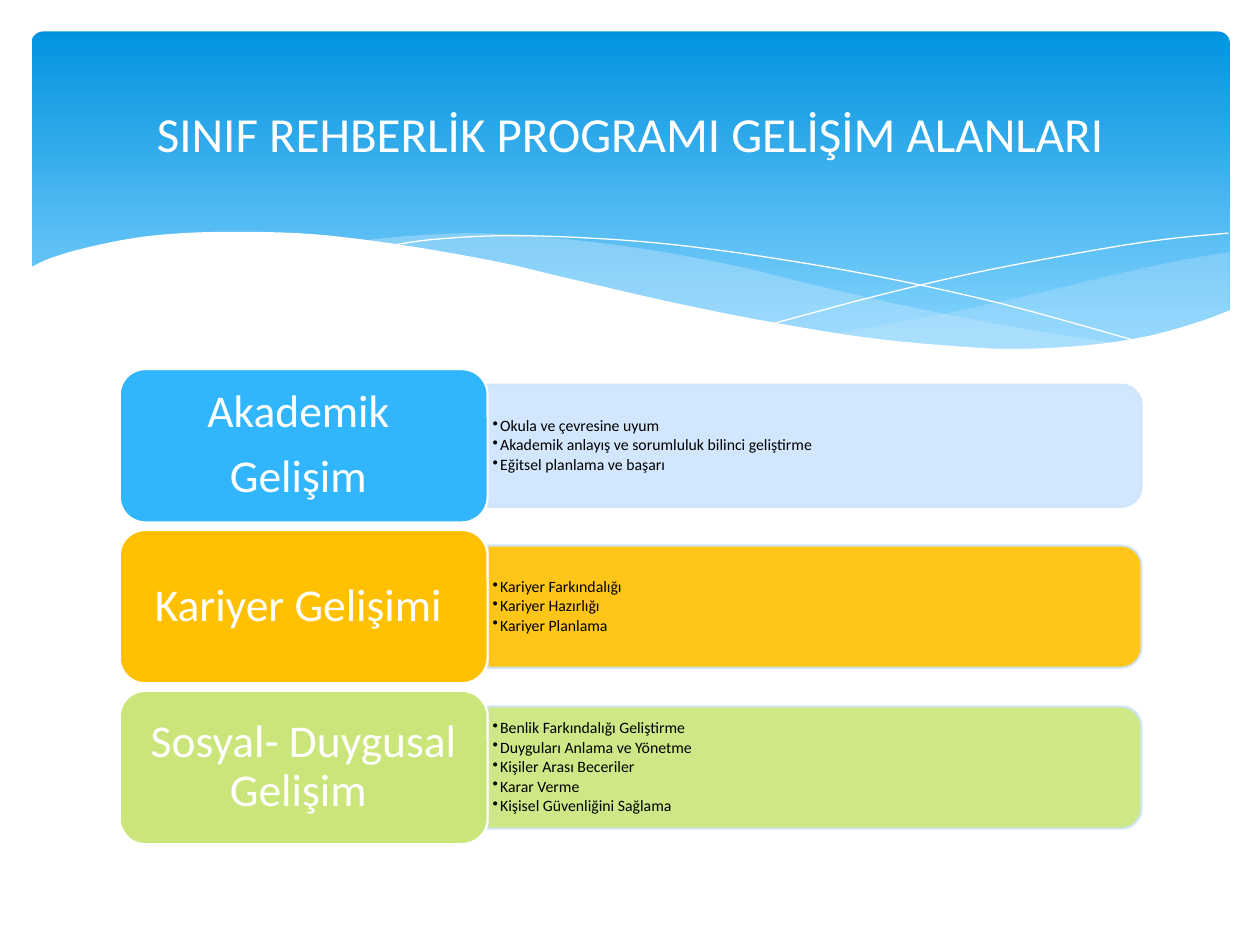
from dataclasses import dataclass

from lxml.etree import SubElement
from pptx import Presentation
from pptx.dml.color import RGBColor
from pptx.enum.shapes import MSO_SHAPE
from pptx.enum.text import MSO_ANCHOR, PP_ALIGN
from pptx.oxml.ns import qn
from pptx.util import Inches, Pt


@dataclass(frozen=True)
class Theme:
    """Colours, font and type sizes of the slide."""
    font: str = "Calibri"
    title: int = 28
    label: int = 26
    detail: int = 9
    white: str = "FFFFFF"
    black: str = "000000"
    sky_top: str = "0293E0"
    sky_bottom: str = "83D3FE"
    mist: str = "C6E7FC"
    pale: str = "CEE5FE"
    blue: str = "31B6FD"
    amber: str = "FFC000"
    lime: str = "CAE67B"


T = Theme()
RIGHT_WAVE = (
    [(6.36, 2.4), (7.04, 2.28), (7.8, 2.12), (8.51, 1.95), (9.1, 1.82), (9.51, 1.75)],
    [(9.51, 2.22), (9.1, 2.37), (8.72, 2.45), (8.29, 2.51), (7.78, 2.53), (7.2, 2.5),
     (6.36, 2.4)],
)
MIDDLE_WAVE = (
    [(2.61, 1.66), (3.03, 1.62), (3.55, 1.6), (4.17, 1.64), (4.89, 1.73), (5.59, 1.86),
     (6.04, 1.97), (6.81, 2.15), (7.5, 2.29), (8.12, 2.4), (8.68, 2.48)],
    [(8.68, 2.48), (8.23, 2.52), (7.82, 2.53), (7.36, 2.52), (6.7, 2.45), (5.93, 2.33),
     (5.05, 2.15), (4.24, 1.97), (3.58, 1.82), (2.98, 1.71), (2.61, 1.66)],
)
FALLING_LINE = [(2.84, 1.7), (3.19, 1.65), (3.76, 1.62), (4.44, 1.64), (5.08, 1.69),
                (5.83, 1.79), (6.7, 1.94), (7.7, 2.16), (8.82, 2.47)]
RISING_LINE = [(5.88, 2.32), (6.7, 2.1), (7.51, 1.91), (8.41, 1.74), (8.99, 1.65),
               (9.5, 1.6)]
FRONT_WAVE = (
    [(-0.02, 1.88), (0.15, 1.8), (0.42, 1.72), (0.81, 1.64), (1.21, 1.6), (1.68, 1.59),
     (2.25, 1.61), (2.91, 1.69), (3.66, 1.82), (4.22, 1.95), (5.04, 2.14), (5.78, 2.29),
     (6.63, 2.43), (7.36, 2.5), (7.84, 2.52), (8.38, 2.49), (8.85, 2.42), (9.25, 2.31),
     (9.52, 2.21)],
    [(9.52, 3.04), (-0.02, 3.04)],
)
ROWS = [
    (T.blue, T.pale, ["Akademik ", "Gelişim "],
     ["Okula ve çevresine uyum", "Akademik anlayış ve sorumluluk bilinci geliştirme",
      "Eğitsel planlama ve başarı"]),
    (T.amber, T.amber, ["Kariyer Gelişimi "],
     ["Kariyer Farkındalığı", "Kariyer Hazırlığı", "Kariyer Planlama"]),
    (T.lime, T.lime, ["Sosyal- Duygusal Gelişim "],
     ["Benlik Farkındalığı Geliştirme", "Duyguları Anlama ve Yönetme",
      "Kişiler Arası Beceriler", "Karar Verme", "Kişisel Güvenliğini Sağlama"]),
]


def paint(fill, color, alpha=100):
    """Fill solidly with a colour at a percentage of opacity."""
    fill.solid()
    fill.fore_color.rgb = RGBColor.from_string(color)
    if alpha < 100:
        clr = fill._xPr.find(qn("a:solidFill"))[0]
        SubElement(clr, qn("a:alpha"), val=str(alpha * 1000))


def smooth(knots, steps=5):
    """Return points on a Catmull-Rom curve through the knots."""
    ends = [knots[0], *knots, knots[-1]]
    pts = [knots[0]]
    for a, b, c, d in zip(ends, ends[1:], ends[2:], ends[3:]):
        for i in range(1, steps + 1):
            t = i / steps
            pts.append(tuple(
                (2 * q + (r - p) * t + (2 * p - 5 * q + 4 * r - s) * t ** 2
                 + (3 * q - p - 3 * r + s) * t ** 3) / 2
                for p, q, r, s in zip(a, b, c, d)))
    return pts


def add_curve(s, x, y, edges, close=True):
    """Draw smooth edges, joined in order, from the corner x, y."""
    pts = [(Inches(x + px), Inches(y + py))
           for edge in edges
           for px, py in (smooth(edge) if len(edge) > 2 else edge)]
    fb = s.shapes.build_freeform(*pts[0])
    fb.add_line_segments(pts[1:], close=close)
    sp = fb.convert_to_shape()
    sp.shadow.inherit = False
    return sp


def write(tf, lines, size, color, align, margins=(0.1, 0.05), spacing=None, after=0):
    """Write one paragraph per line, centred vertically."""
    tf.text = "\n".join(lines)
    tf.word_wrap = True
    tf.vertical_anchor = MSO_ANCHOR.MIDDLE
    tf.margin_left = tf.margin_right = Inches(margins[0])
    tf.margin_top = tf.margin_bottom = Inches(margins[1])
    for p in tf.paragraphs:
        p.alignment = align
        p.line_spacing = spacing
        p.space_after = Pt(after)
        for r in p.runs:
            r.font.name = T.font
            r.font.size = Pt(size)
            r.font.color.rgb = RGBColor.from_string(color)


def add_header(s, x, y, w, h, title):
    """Draw the gradient panel, its waves and the title."""
    sp = s.shapes.add_shape(MSO_SHAPE.ROUNDED_RECTANGLE, *map(Inches, (x, y, w, h)))
    sp.adjustments[0] = 0.034
    sp.shadow.inherit = False
    sp.line.fill.background()
    sp.fill.gradient()
    sp.fill.gradient_angle = 270
    for stop, color, pos in zip(sp.fill.gradient_stops, (T.sky_top, T.sky_bottom), (0, 0.9)):
        stop.color.rgb = RGBColor.from_string(color)
        stop.position = pos
    for edges, alpha in ((RIGHT_WAVE, 29), (MIDDLE_WAVE, 40)):
        wave = add_curve(s, x, y, edges)
        paint(wave.fill, T.mist, alpha)
        wave.line.fill.background()
    for knots in (FALLING_LINE, RISING_LINE):
        line = add_curve(s, x, y, [knots], close=False)
        line.fill.background()
        paint(line.line.fill, T.white)
        line.line.width = Pt(0)
    front = add_curve(s, x, y, FRONT_WAVE)
    paint(front.fill, T.white)
    front.line.fill.background()
    tb = s.shapes.add_textbox(*map(Inches, (x + 0.25, y + 0.12, w - 0.51, 1.37)))
    write(tb.text_frame, [title], T.title, T.white, PP_ALIGN.CENTER)


def add_row(s, x, y, w, h, color, tint, label, details):
    """Draw a label with its bar of bulleted details to the right."""
    label_w, bar_h = 2.92, 0.97
    bar_w = w - label_w
    mid_x, mid_y = x + label_w + bar_w / 2, y + h / 2
    bar = s.shapes.add_shape(MSO_SHAPE.ROUND_2_SAME_RECTANGLE, *map(
        Inches, (mid_x - bar_h / 2, mid_y - bar_w / 2, bar_h, bar_w)))
    bar.rotation = 90
    tag = s.shapes.add_shape(MSO_SHAPE.ROUNDED_RECTANGLE, *map(Inches, (x, y, label_w, h)))
    for sp, fill, edge, alpha in ((bar, tint, T.pale, 90), (tag, color, T.white, 100)):
        sp.shadow.inherit = False
        paint(sp.fill, fill, alpha)
        paint(sp.line.fill, edge, alpha)
        sp.line.width = Pt(1.25)
    write(tag.text_frame, label, T.label, T.white, PP_ALIGN.CENTER, (0.17, 0.11), 0.9, 9.1)
    tb = s.shapes.add_textbox(*map(
        Inches, (x + label_w, mid_y - 0.44, bar_w - 0.05, 0.88)))
    write(tb.text_frame, details, T.detail, T.black, PP_ALIGN.LEFT, (0.04, 0.02), 0.9, 1.35)
    for p in tb.text_frame.paragraphs:
        pPr = p._p.get_or_add_pPr()
        pPr.set("marL", str(Inches(0.06)))
        pPr.set("indent", str(-Inches(0.06)))
        SubElement(pPr, qn("a:buChar"), char="•")


def add_rows(s, x, y, w, h, rows, gap=0.06):
    """Stack the rows evenly in the box."""
    row_h = (h - gap * (len(rows) - 1)) / len(rows)
    for i, row in enumerate(rows):
        add_row(s, x, y + i * (row_h + gap), w, row_h, *row)


def main():
    """Build and save the slide."""
    prs = Presentation()
    prs.slide_width, prs.slide_height = Inches(10), Inches(7.5)
    s = prs.slides.add_slide(prs.slide_layouts[6])
    add_header(s, 0.25, 0.25, 9.51, 2.7, "SINIF REHBERLİK PROGRAMI GELİŞİM ALANLARI")
    add_rows(s, 0.95, 2.93, 8.11, 3.77, ROWS)
    prs.save("out.pptx")


if __name__ == "__main__":
    main()
